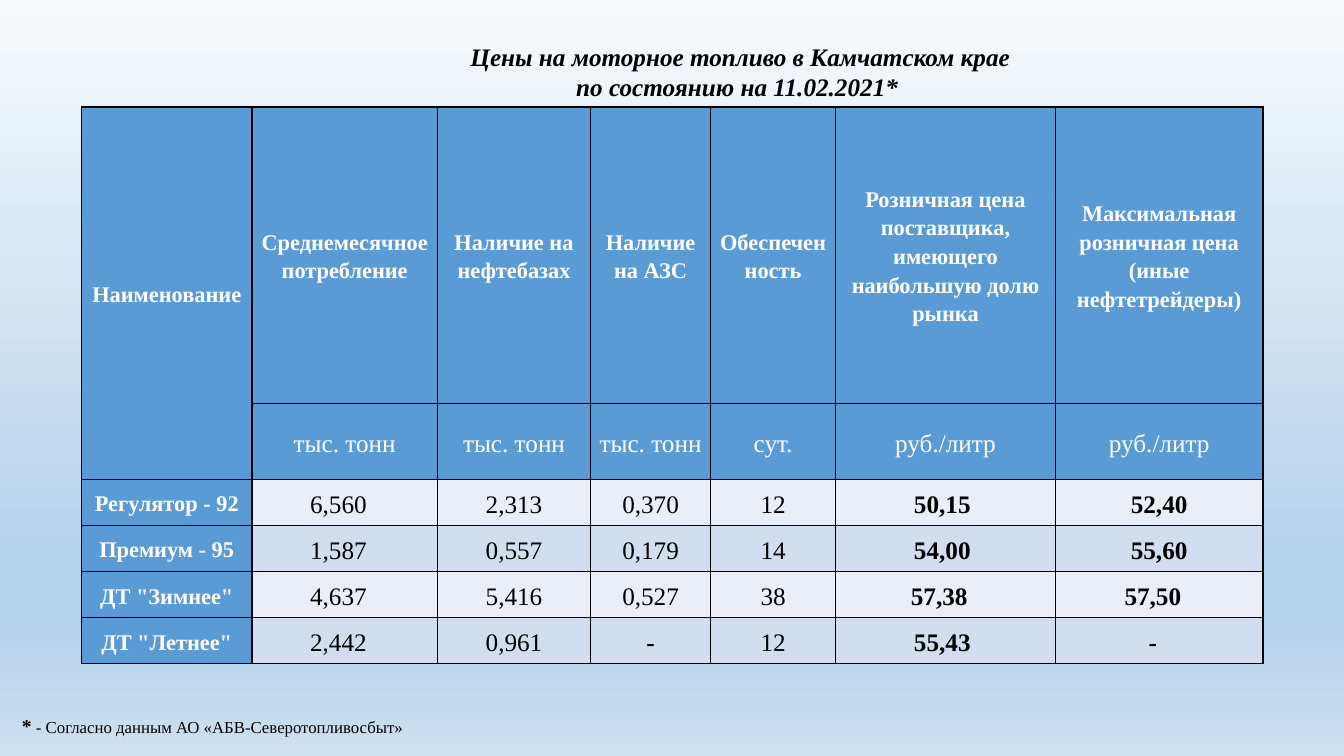
from dataclasses import dataclass

from pptx import Presentation
from pptx.dml.color import RGBColor
from pptx.enum.text import MSO_ANCHOR, MSO_AUTO_SIZE, PP_ALIGN
from pptx.oxml import parse_xml
from pptx.oxml.ns import nsdecls, qn
from pptx.util import Pt

MIDDLE, CENTER, FIXED = MSO_ANCHOR.MIDDLE, PP_ALIGN.CENTER, MSO_AUTO_SIZE.NONE
TITLE_ONLY = 5

TITLE = ["Цены на моторное топливо в Камчатском крае",
         "по состоянию на 11.02.2021* "]
NOTE = ("*", " - Согласно данным АО «АБВ-Северотопливосбыт»")
HEADS = ["Наименование", "Среднемесячное потребление",
         "Наличие на нефтебазах", "Наличие на АЗС", "Обеспеченность",
         "Розничная цена поставщика, имеющего наибольшую долю рынка",
         "Максимальная розничная цена\n(иные нефтетрейдеры)"]
UNITS = ["", "тыс. тонн", "тыс. тонн", "тыс. тонн", "сут.",
         "руб./литр", "руб./литр"]
FUELS = [
    ["Регулятор - 92", "6,560", "2,313", "0,370", "12", "50,15", "52,40"],
    ["Премиум - 95", "1,587", "0,557", "0,179", "14", "54,00", "55,60"],
    ['ДТ "Зимнее"', "4,637", "5,416", "0,527", "38", "57,38", "57,50"],
    ['ДТ "Летнее"', "2,442", "0,961", "-", "12", "55,43", "-"],
]
ROWS = [HEADS, UNITS, *FUELS]
PRICE_COL = 5
# Extra right inset by (row, column), moving centred figures left
NUDGE = {(row, 1): 9 for row in range(2, 6)}
NUDGE |= {(row, PRICE_COL): 4.5 for row in range(2, 6)}
NUDGE |= {(4, 5): 9, (4, 6): 9, (5, 6): 9}

SLIDE = (960, 540)
TITLE_BOX = (326.9, 25.9, 403.9, 51.1)
NOTE_BOX = (8.6, 506.2, 430.6, 24.5)
TABLE_AT = (58.3, 76.4)
WIDTHS = [121.7, 132.5, 109.4, 85.7, 89.3, 157, 148.3]
HEIGHTS = [211.7, 54.4] + [32.9] * len(FUELS)
INSET = 5


@dataclass(frozen=True)
class Theme:
    font: str = "Times New Roman"
    ink: str = "000000"
    light: str = "FFFFFF"
    head: str = "5B9BD5"
    bands: tuple = ("EAEFF7", "D2DEEF")
    sky: tuple = ((0, "F7FAFD"), (74, "B5D2EC"), (83, "B5D2EC"),
                  (100, "CEE1F2"))
    big: int = 18
    label: int = 16
    mark: int = 14
    small: int = 12
    rule: float = 1


THEME = Theme()


def style(font, size, color, bold=False, italic=False):
    font.name, font.size = THEME.font, Pt(size)
    font.bold, font.italic = bold, italic
    font.color.rgb = RGBColor.from_string(color)


def paint_sky(slide):
    fill = slide.background.fill
    fill.gradient()
    fill.gradient_angle = 270
    stops = next(slide.element.iter(qn("a:gsLst")))
    for stop in list(stops):
        stops.remove(stop)
    for pos, color in THEME.sky:
        stops.append(parse_xml(
            f'<a:gs {nsdecls("a")} pos="{pos * 1000}">'
            f'<a:srgbClr val="{color}"/></a:gs>'))


def add_title(slide):
    title = slide.shapes.title
    title.left, title.top, title.width, title.height = map(Pt, TITLE_BOX)
    frame = title.text_frame
    frame.text = "\n".join(TITLE)
    frame.word_wrap, frame.auto_size = False, FIXED
    frame.vertical_anchor = MSO_ANCHOR.TOP
    for para in frame.paragraphs:
        para.alignment = CENTER
        style(para.font, THEME.big, THEME.ink, bold=True, italic=True)


def add_note(slide):
    frame = slide.shapes.add_textbox(*map(Pt, NOTE_BOX)).text_frame
    frame.word_wrap = True
    looks = ((THEME.mark, True), (THEME.small, False))
    for text, (size, bold) in zip(NOTE, looks):
        run = frame.paragraphs[0].add_run()
        run.text = text
        style(run.font, size, THEME.ink, bold)


def rule_cell(cell):
    """Draw a thin line on all four sides; must come before the fill."""
    props = cell._tc.get_or_add_tcPr()
    for side in "LRTB":
        props.append(parse_xml(
            f'<a:ln{side} {nsdecls("a")} w="{Pt(THEME.rule)}"><a:solidFill>'
            f'<a:srgbClr val="{THEME.ink}"/></a:solidFill></a:ln{side}>'))


def cell_look(row, col):
    """Return fill, text size, text colour and boldness."""
    if row == 0 or col == 0:
        return THEME.head, THEME.label, THEME.light, True
    if row == 1:
        return THEME.head, THEME.big, THEME.light, False
    bold = col >= PRICE_COL or ROWS[row][col] == "-"
    return THEME.bands[row % 2], THEME.big, THEME.ink, bold


def fill_cell(cell, row, col):
    back, size, color, bold = cell_look(row, col)
    rule_cell(cell)
    cell.fill.solid()
    cell.fill.fore_color.rgb = RGBColor.from_string(back)
    cell.vertical_anchor = MIDDLE
    cell.margin_top = cell.margin_bottom = 0
    cell.margin_left = Pt(INSET)
    cell.margin_right = Pt(INSET + NUDGE.get((row, col), 0))
    cell.text = ROWS[row][col]
    for para in cell.text_frame.paragraphs:
        para.alignment, para.line_spacing = CENTER, 1.15
        style(para.font, size, color, bold)


def add_prices(slide):
    table = slide.shapes.add_table(
        len(ROWS), len(WIDTHS), *map(Pt, TABLE_AT),
        Pt(sum(WIDTHS)), Pt(sum(HEIGHTS))).table
    for col, width in zip(table.columns, WIDTHS):
        col.width = Pt(width)
    for row, height in zip(table.rows, HEIGHTS):
        row.height = Pt(height)
    for row in range(len(ROWS)):
        for col in range(len(WIDTHS)):
            fill_cell(table.cell(row, col), row, col)
    table.cell(0, 0).merge(table.cell(1, 0))


def main():
    deck = Presentation()
    deck.slide_width, deck.slide_height = map(Pt, SLIDE)
    slide = deck.slides.add_slide(deck.slide_layouts[TITLE_ONLY])
    paint_sky(slide)
    add_prices(slide)
    add_title(slide)
    add_note(slide)
    deck.save("out.pptx")


if __name__ == "__main__":
    main()
